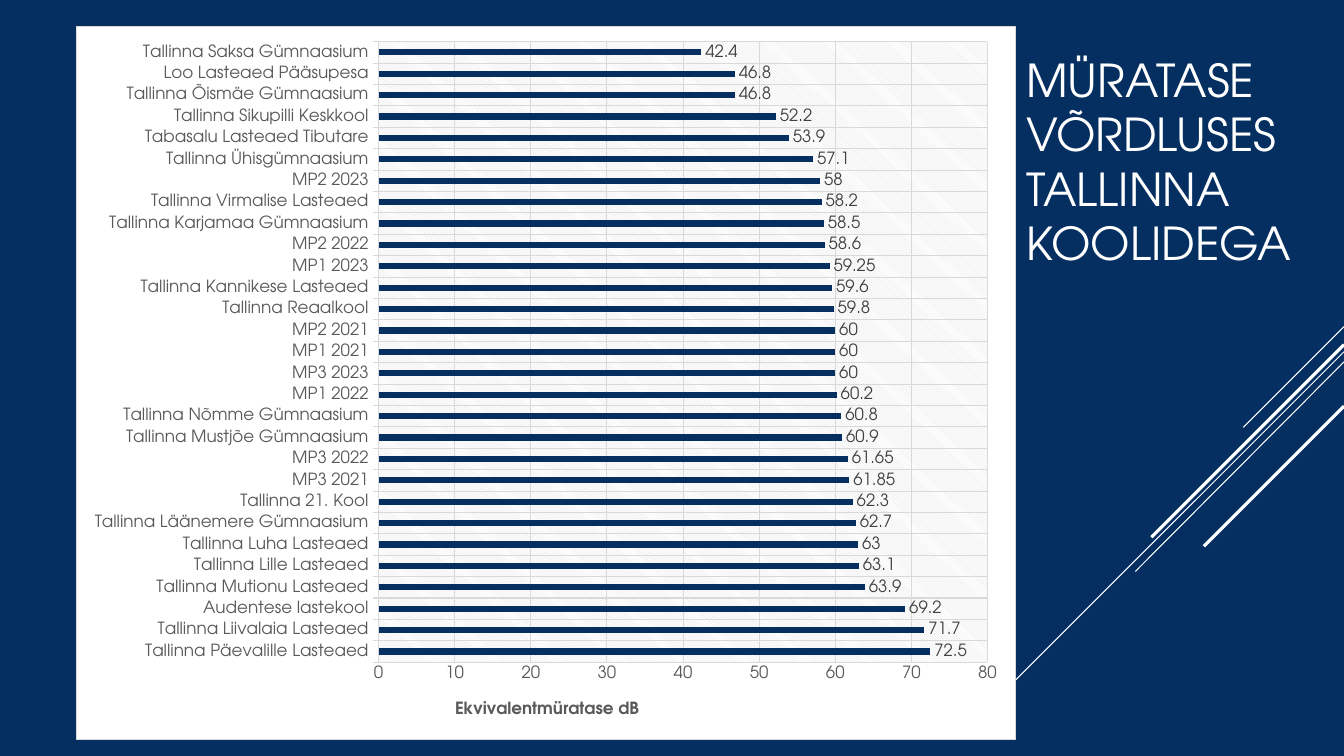
from dataclasses import dataclass

from lxml import etree
from pptx import Presentation
from pptx.chart.data import CategoryChartData
from pptx.dml.color import RGBColor
from pptx.enum.chart import XL_CHART_TYPE, XL_LABEL_POSITION, XL_TICK_MARK
from pptx.enum.shapes import MSO_CONNECTOR
from pptx.enum.text import MSO_ANCHOR
from pptx.oxml import parse_xml
from pptx.oxml.ns import nsdecls, qn
from pptx.util import Inches, Pt

BAR_CLUSTERED = XL_CHART_TYPE.BAR_CLUSTERED
OUTSIDE_END = XL_LABEL_POSITION.OUTSIDE_END
TICK_OUTSIDE = XL_TICK_MARK.OUTSIDE
TICK_NONE = XL_TICK_MARK.NONE
STRAIGHT = MSO_CONNECTOR.STRAIGHT
MIDDLE = MSO_ANCHOR.MIDDLE

FONT = "TeX Gyre Adventor"
NAVY = "052F61"
WHITE = "FFFFFF"
GRID_GRAY = "D9D9D9"
AXIS_GRAY = "595959"
LABEL_GRAY = "404040"
SLIDE_WIDTH = 13.33


@dataclass
class Diagonal:
    start_y: float
    end_x: float
    end_y: float
    weight: float


@dataclass
class NoiseLevel:
    place: str
    decibels: float


DIAGONALS = [
    Diagonal(3.24, 12.33, 4.24, 0.75),
    Diagonal(3.49, 10.07, 6.75, 0.75),
    Diagonal(3.59, 11.26, 5.67, 0.75),
    Diagonal(3.42, 11.42, 5.33, 2.25),
    Diagonal(4.03, 11.94, 5.42, 2.25),
]

NOISE_LEVELS = [
    NoiseLevel("Tallinna Päevalille Lasteaed", 72.5),
    NoiseLevel("Tallinna Liivalaia Lasteaed", 71.7),
    NoiseLevel("Audentese lastekool", 69.2),
    NoiseLevel("Tallinna Mutionu Lasteaed", 63.9),
    NoiseLevel("Tallinna Lille Lasteaed", 63.1),
    NoiseLevel("Tallinna Luha Lasteaed", 63),
    NoiseLevel("Tallinna Läänemere Gümnaasium", 62.7),
    NoiseLevel("Tallinna 21. Kool", 62.3),
    NoiseLevel("MP3 2021", 61.85),
    NoiseLevel("MP3 2022", 61.65),
    NoiseLevel("Tallinna Mustjõe Gümnaasium", 60.9),
    NoiseLevel("Tallinna Nõmme Gümnaasium", 60.8),
    NoiseLevel("MP1 2022", 60.2),
    NoiseLevel("MP3 2023", 60),
    NoiseLevel("MP1 2021", 60),
    NoiseLevel("MP2 2021", 60),
    NoiseLevel("Tallinna Reaalkool", 59.8),
    NoiseLevel("Tallinna Kannikese Lasteaed", 59.6),
    NoiseLevel("MP1 2023", 59.25),
    NoiseLevel("MP2 2022", 58.6),
    NoiseLevel("Tallinna Karjamaa Gümnaasium", 58.5),
    NoiseLevel("Tallinna Virmalise Lasteaed", 58.2),
    NoiseLevel("MP2 2023", 58),
    NoiseLevel("Tallinna Ühisgümnaasium", 57.1),
    NoiseLevel("Tabasalu Lasteaed Tibutare", 53.9),
    NoiseLevel("Tallinna Sikupilli Keskkool", 52.2),
    NoiseLevel("Tallinna Õismäe Gümnaasium", 46.8),
    NoiseLevel("Loo Lasteaed Pääsupesa", 46.8),
    NoiseLevel("Tallinna Saksa Gümnaasium", 42.4),
]


def color(value: str) -> RGBColor:
    return RGBColor.from_string(value)


def style_font(font, size: float, value: str, bold: bool = False) -> None:
    font.name = FONT
    font.size = Pt(size)
    font.bold = bold
    font.color.rgb = color(value)


def style_line(line, value: str, weight: float) -> None:
    line.color.rgb = color(value)
    line.width = Pt(weight)


def add_diagonal(slide, diagonal: Diagonal) -> None:
    connector = slide.shapes.add_connector(
        STRAIGHT, Inches(SLIDE_WIDTH), Inches(diagonal.start_y),
        Inches(diagonal.end_x), Inches(diagonal.end_y))
    style_line(connector.line, WHITE, diagonal.weight)
    etree.SubElement(connector.element.spPr, qn("a:effectLst"))


def add_title(slide) -> None:
    box = slide.shapes.add_textbox(Inches(10.08), Inches(0.77), Inches(4.32), Inches(1.65))
    text_frame = box.text_frame
    text_frame.word_wrap = True
    text_frame.vertical_anchor = MIDDLE
    text_frame.text = "MÜRATASE\vVÕRDLUSES TALLINNA KOOLIDEGA"
    for run in text_frame.paragraphs[0].runs:
        style_font(run.font, 32.4, WHITE)


def manual_layout(target: str, **fractions: float):
    modes = "".join(f'<c:{axis}Mode val="edge"/>' for axis in "xy")
    values = "".join(f'<c:{key} val="{value}"/>' for key, value in fractions.items())
    return parse_xml(f'<c:layout {nsdecls("c")}><c:manualLayout>{target}{modes}{values}'
                     '</c:manualLayout></c:layout>')


def replace_layout(parent, layout, index: int) -> None:
    for previous in parent.findall(qn("c:layout")):
        parent.remove(previous)
    parent.insert(index, layout)


def shape_properties(content: str):
    return parse_xml(f'<c:spPr {nsdecls("c", "a")}>{content}</c:spPr>')


def solid(value: str) -> str:
    return f'<a:solidFill><a:srgbClr val="{value}"/></a:solidFill>'


def style_axis(axis, tick_mark) -> None:
    axis.major_tick_mark = tick_mark
    axis.minor_tick_mark = TICK_NONE
    axis.has_major_gridlines = True
    style_line(axis.major_gridlines.format.line, GRID_GRAY, 0.75)
    style_font(axis.tick_labels.font, 12, AXIS_GRAY)


def style_axes(chart) -> None:
    style_axis(chart.category_axis, TICK_OUTSIDE)
    style_line(chart.category_axis.format.line, GRID_GRAY, 0.75)
    value_axis = chart.value_axis
    style_axis(value_axis, TICK_NONE)
    value_axis.format.line.fill.background()
    value_axis.minimum_scale = 0
    value_axis.maximum_scale = 80
    value_axis.major_unit = 10
    title = value_axis.axis_title
    title.text_frame.text = "Ekvivalentmüratase dB"
    style_font(title.text_frame.paragraphs[0].runs[0].font, 12, AXIS_GRAY, True)
    replace_layout(title.element, manual_layout("", x=0.4, y=0.94), 1)


def style_bars(plot) -> None:
    plot.gap_width = 247
    plot.vary_by_categories = False
    fill = plot.series[0].format.fill
    fill.solid()
    fill.fore_color.rgb = color(NAVY)
    plot.has_data_labels = True
    labels = plot.data_labels
    labels.show_value = True
    labels.position = OUTSIDE_END
    style_font(labels.font, 12, LABEL_GRAY)


def style_areas(chart) -> None:
    chart_element = chart.element.find(qn("c:chart"))
    chart_element.addnext(shape_properties(
        f'{solid(WHITE)}<a:ln w="{Pt(0.75)}">{solid(GRID_GRAY)}</a:ln>'))
    plot_area = chart_element.find(qn("c:plotArea"))
    inner = '<c:layoutTarget val="inner"/>'
    replace_layout(plot_area, manual_layout(inner, x=0.322, y=0.021, w=0.648, h=0.871), 0)
    plot_area.append(shape_properties(
        f'<a:pattFill prst="ltDnDiag"><a:fgClr><a:srgbClr val="{GRID_GRAY}"/></a:fgClr>'
        f'<a:bgClr><a:srgbClr val="{WHITE}"/></a:bgClr></a:pattFill><a:ln><a:noFill/></a:ln>'))


def add_noise_chart(slide) -> None:
    data = CategoryChartData()
    data.categories = [level.place for level in NOISE_LEVELS]
    data.add_series("Series 1", [level.decibels for level in NOISE_LEVELS])
    frame = slide.shapes.add_chart(
        BAR_CLUSTERED, Inches(0.75), Inches(0.26), Inches(9.33), Inches(7.08), data)
    chart = frame.chart
    chart.has_title = False
    chart.has_legend = False
    style_font(chart.font, 10, WHITE)
    style_axes(chart)
    style_bars(chart.plots[0])
    style_areas(chart)


def main() -> None:
    presentation = Presentation()
    presentation.slide_width = Inches(SLIDE_WIDTH)
    presentation.slide_height = Inches(7.5)
    slide = presentation.slides.add_slide(presentation.slide_layouts[6])
    background = slide.background.fill
    background.solid()
    background.fore_color.rgb = color(NAVY)
    for diagonal in DIAGONALS:
        add_diagonal(slide, diagonal)
    add_title(slide)
    add_noise_chart(slide)
    presentation.save("out.pptx")


if __name__ == "__main__":
    main()
